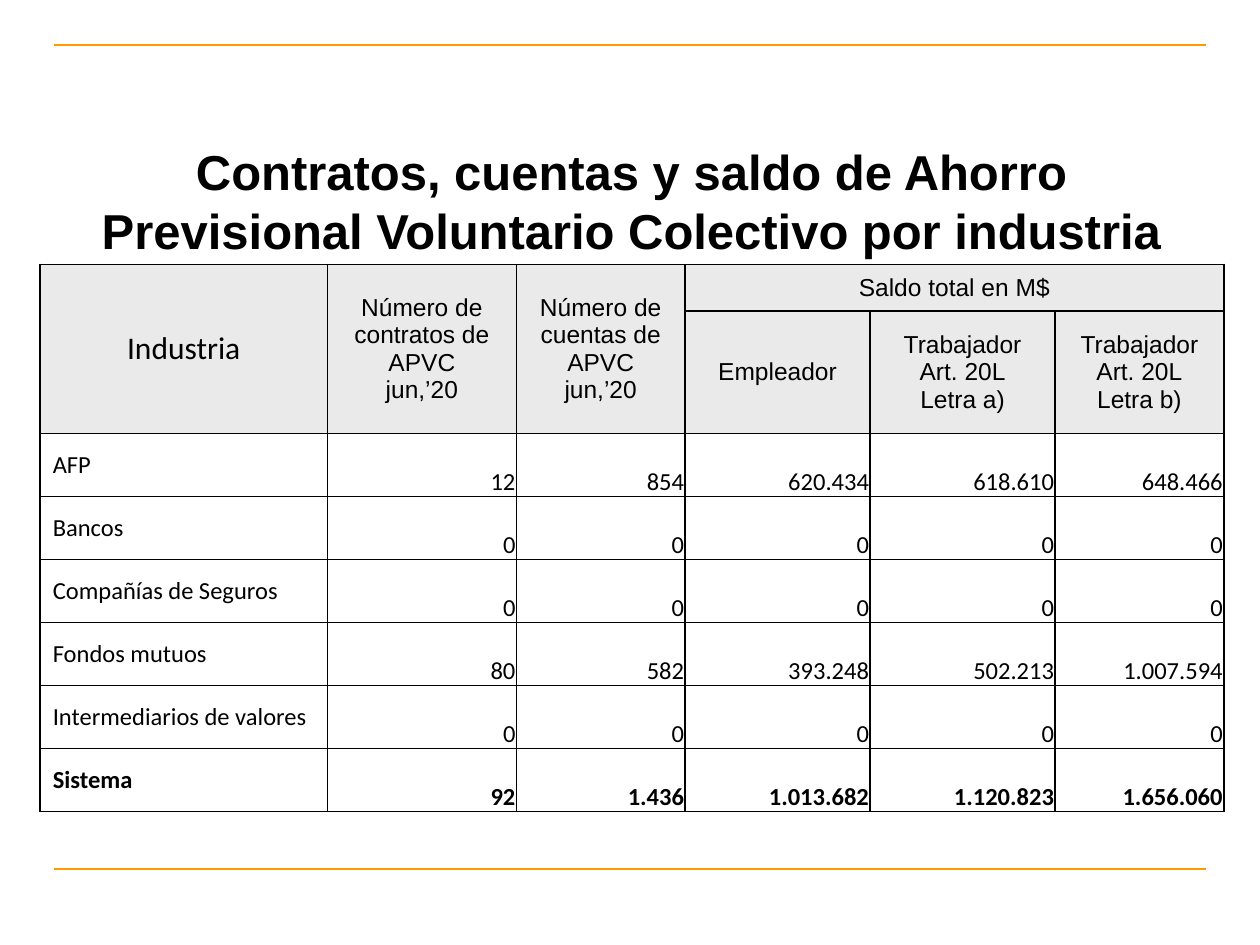
import pptx
import pptx.util
import pptx.dml.color
import pptx.enum.shapes
import pptx.enum.text
import pptx.oxml
import pptx.oxml.ns

Cm = pptx.util.Cm
Pt = pptx.util.Pt
ALIGN = pptx.enum.text.PP_ALIGN
ANCHOR = pptx.enum.text.MSO_ANCHOR

COLORS = {"rule": "FF9900", "text": "000000", "head": "EAEAEA", "body": "FFFFFF"}

TITLE = "Contratos, cuentas y saldo de Ahorro Previsional Voluntario Colectivo por industria"
COLS = [5.79, 3.81, 3.4, 3.73, 3.73, 3.4]
ROWS = [0.94, 2.24] + [1.27] * 6
# Row, column, text, rows spanned, columns spanned
HEADS = [
    (0, 0, "Industria", 2, 1),
    (0, 1, "Número de contratos de APVC\njun,’20", 2, 1),
    (0, 2, "Número de cuentas de APVC\njun,’20", 2, 1),
    (0, 3, "Saldo total en M$", 1, 3),
    (1, 3, "Empleador", 1, 1),
    (1, 4, "Trabajador\nArt. 20L\nLetra a)", 1, 1),
    (1, 5, "Trabajador\nArt. 20L\nLetra b)", 1, 1),
]
DATA = [
    ("AFP", "12", "854", "620.434", "618.610", "648.466"),
    ("Bancos", "0", "0", "0", "0", "0"),
    ("Compañías de Seguros", "0", "0", "0", "0", "0"),
    ("Fondos mutuos", "80", "582", "393.248", "502.213", "1.007.594"),
    ("Intermediarios de valores", "0", "0", "0", "0", "0"),
    ("Sistema", "92", "1.436", "1.013.682", "1.120.823", "1.656.060"),
]


def tint(name):
    return pptx.dml.color.RGBColor.from_string(COLORS[name])


class Page:
    def __init__(self, slide):
        self.slide = slide

    def style(self, frame, size, font, align, bold=False):
        for para in frame.paragraphs:
            para.alignment = align
            para.font.size = Pt(size)
            para.font.name = font
            para.font.bold = bold
            para.font.color.rgb = tint("text")

    def rule(self, top):
        line = self.slide.shapes.add_connector(
            pptx.enum.shapes.MSO_CONNECTOR.STRAIGHT,
            Cm(1.09), Cm(top), Cm(24.31), Cm(top))
        line.line.color.rgb = tint("rule")
        line.line.width = Pt(0.75)
        props = line._element.spPr
        props.append(props.makeelement(pptx.oxml.ns.qn("a:effectLst"), {}))

    def title(self, text):
        box = self.slide.shapes.add_textbox(Cm(1.3), Cm(2.85), Cm(22.86), Cm(3.18))
        frame = box.text_frame
        frame.word_wrap = True
        frame.margin_top = 0
        frame.vertical_anchor = ANCHOR.TOP
        frame.text = text
        self.style(frame, 28, "Arial", ALIGN.CENTER, True)

    def grid(self, left, top):
        """Add an empty table with the set column widths and row heights."""
        table = self.slide.shapes.add_table(
            len(ROWS), len(COLS), Cm(left), Cm(top), Cm(sum(COLS)), Cm(sum(ROWS))).table
        for col, width in zip(table.columns, COLS):
            col.width = Cm(width)
        for row, height in zip(table.rows, ROWS):
            row.height = Cm(height)
        for index, row in enumerate(table.rows):
            for cell in row.cells:
                cell.fill.solid()
                cell.fill.fore_color.rgb = tint("head" if index < 2 else "body")
                self.edge(cell)
        return table

    def edge(self, cell):
        """Draw a 1 pt line on all four sides of a cell."""
        props = cell._tc.get_or_add_tcPr()
        for place, side in enumerate(("lnL", "lnR", "lnT", "lnB")):
            props.insert(place, pptx.oxml.parse_xml(
                f'<a:{side} {pptx.oxml.ns.nsdecls("a")} w="{Pt(1)}"><a:solidFill>'
                f'<a:srgbClr val="{COLORS["text"]}"/></a:solidFill></a:{side}>'))

    def head(self, table, row, col, text, down, across):
        cell = table.cell(row, col)
        if down * across > 1:
            cell.merge(table.cell(row + down - 1, col + across - 1))
        cell.text = text
        cell.vertical_anchor = ANCHOR.MIDDLE
        cell.margin_top = cell.margin_bottom = Cm(0.05)
        size, font = (18, "Calibri") if col == 0 else (14, "Arial")
        self.style(cell.text_frame, size, font, ALIGN.CENTER)

    def label(self, cell, text, bold):
        cell.text = text
        cell.vertical_anchor = ANCHOR.MIDDLE
        self.style(cell.text_frame, 14, "Calibri", ALIGN.LEFT, bold)

    def value(self, cell, text, bold):
        cell.text = text
        cell.vertical_anchor = ANCHOR.BOTTOM
        cell.margin_left = cell.margin_right = cell.margin_top = Cm(0.02)
        cell.margin_bottom = 0
        self.style(cell.text_frame, 14, "Calibri", ALIGN.RIGHT, bold)


def main():
    deck = pptx.Presentation()
    deck.slide_width, deck.slide_height = Cm(25.4), Cm(19.05)
    page = Page(deck.slides.add_slide(deck.slide_layouts[6]))
    for top in (0.91, 17.52):
        page.rule(top)
    page.title(TITLE)
    table = page.grid(0.81, 5.33)
    for head in HEADS:
        page.head(table, *head)
    for row, (name, *values) in enumerate(DATA, 2):
        bold = name == "Sistema"
        page.label(table.cell(row, 0), name, bold)
        for col, text in enumerate(values, 1):
            page.value(table.cell(row, col), text, bold)
    deck.save("out.pptx")


if __name__ == "__main__":
    main()
